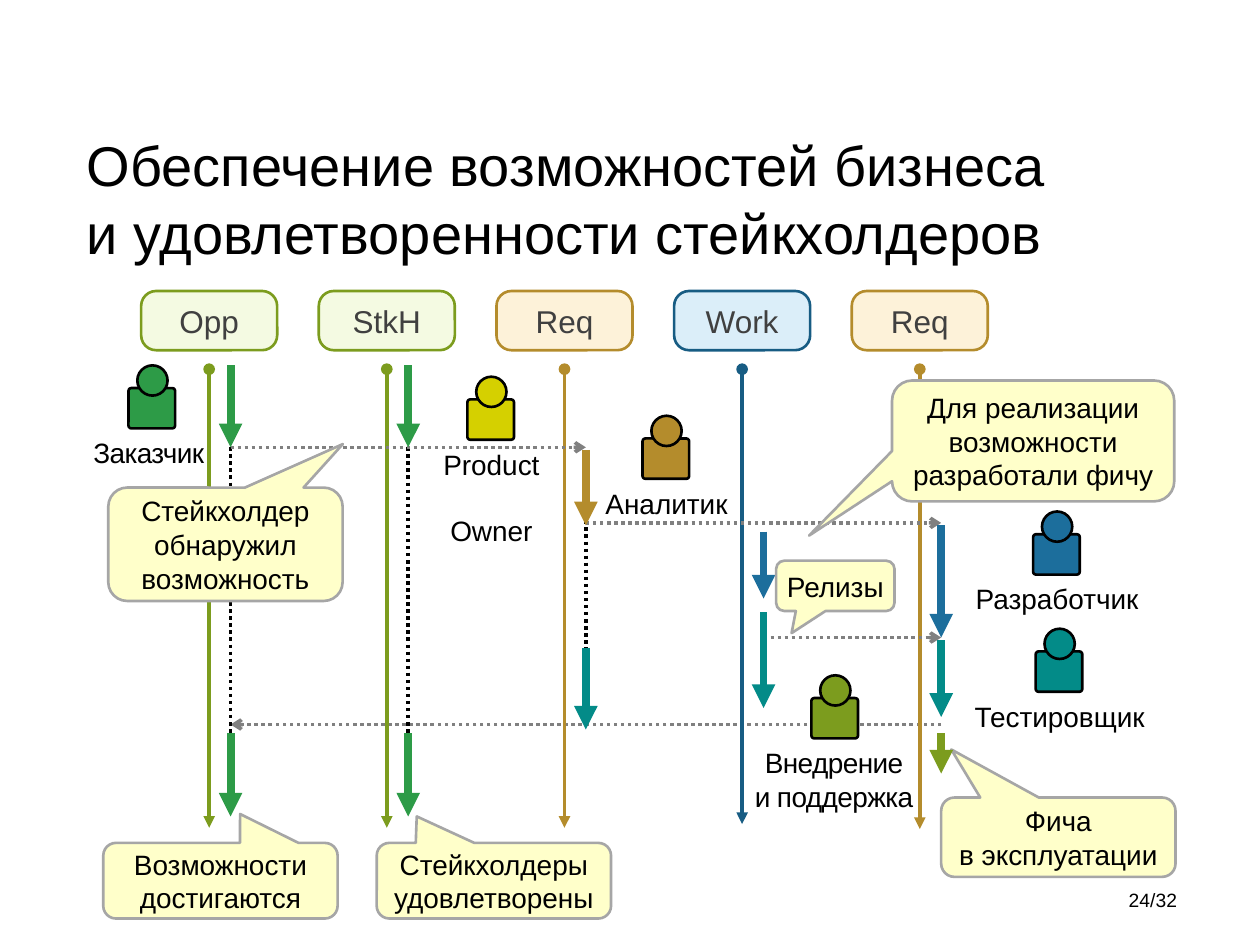
from lxml.etree import SubElement
from pptx import Presentation
from pptx.dml.color import RGBColor
from pptx.enum.dml import MSO_LINE
from pptx.enum.shapes import MSO_CONNECTOR, MSO_SHAPE
from pptx.enum.text import MSO_ANCHOR as Anchor, PP_ALIGN as Align
from pptx.oxml.ns import qn
from pptx.util import Inches, Pt

THEME = {
    "font": "Arial",
    "size": {"title": 32, "lane": 18, "label": 16, "page": 11},
    "width": {"outline": 1.5, "dots": 2, "lane": 2.25, "activity": 4.5},
    "colour": {
        "black": "000000", "dark": "404040", "grey": "808080",
        "olive": "7C9C1E", "ochre": "B48C2C", "navy": "175C83",
        "green": "2D9B47", "yellow": "D5D000", "blue": "1C6E9C", "teal": "038B88",
        "pale olive": "F4FAE2", "pale ochre": "FDF2D9", "pale blue": "DBEEF9",
        "note": "FFFFCA", "note edge": "A6A6A6",
    },
}

TITLE = "Обеспечение возможностей бизнеса\vи удовлетворенности стейкхолдеров"
PAGE = "24/32"
# name, line colour, fill, end of lifeline
LANES = [
    ("Opp", "olive", "pale olive", 6.57),
    ("StkH", "olive", "pale olive", 6.57),
    ("Req", "ochre", "pale ochre", 6.57),
    ("Work", "navy", "pale blue", 6.54),
    ("Req", "ochre", "pale ochre", 6.58),
]
# lane, start, end, colour
ACTIVITIES = [
    (0, 2.9, 3.55, "green"), (0, 5.82, 6.48, "green"),
    (1, 2.9, 3.55, "green"), (1, 5.82, 6.48, "green"),
    (2, 3.57, 4.17, "ochre"), (2, 5.14, 5.79, "teal"),
    (3, 4.22, 4.75, "blue"), (3, 4.86, 5.62, "teal"),
    (4, 4.17, 5.06, "blue"), (4, 5.08, 5.69, "teal"), (4, 5.82, 6.14, "olive"),
]
# lane, start, end
WAITS = [(0, 3.55, 5.82), (1, 3.55, 5.82), (2, 4.13, 5.21)]
# from lane, to lane, y
RETURN = (4, 0, 5.75)
MESSAGES = [(0, 2, 3.55), (2, 4, 4.15), (3, 4, 5.06)]
# role, colour, icon left, icon top, label centre, label width, tracking
PEOPLE = [
    ("Заказчик", "green", 1.02, 2.9, 1.18, 1.21, -0.3),
    ("Product\nOwner", "yellow", 3.71, 2.99, 3.9, 1.01, 0),
    ("Аналитик", "ochre", 5.1, 3.3, 5.29, 1.21, 0),
    ("Разработчик", "blue", 8.2, 4.06, 8.39, 1.52, 0),
    ("Тестировщик", "teal", 8.22, 4.99, 8.41, 1.57, 0),
    ("Внедрение\vи поддержка", "olive", 6.44, 5.36, 6.62, 1.53, -0.3),
]
# text, (left, top, width, height), pointer offset from the centre
LOWER_NOTES = [
    ("Возможности достигаются", (0.82, 6.69, 1.86, 0.6), (0.084, -0.883)),
    ("Стейкхолдеры удовлетворены", (2.99, 6.69, 1.86, 0.6), (-0.329, -0.851)),
    ("Фича\vв эксплуатации", (7.47, 6.33, 1.86, 0.63), (-0.457, -1.106)),
]
UPPER_NOTES = [
    ("Для реализации возможности разработали фичу", (7.08, 3.02, 2.24, 0.96), (-0.794, 0.783)),
    ("Cтейкхолдер обнаружил возможность", (0.86, 3.87, 1.86, 0.9), (0.501, -0.884)),
    ("Релизы", (6.16, 4.45, 0.94, 0.4), (-0.369, 0.938)),
]

FIRST_LANE, LANE_PITCH, ACTIVITY_SHIFT = 1.66, 1.41, 0.17
HEADER_W, HEADER_H, HEADER_TOP, LIFELINE_TOP = 1.08, 0.47, 2.31, 2.93

deck = Presentation()
deck.slide_width, deck.slide_height = Inches(10), Inches(7.5)
slide = deck.slides.add_slide(deck.slide_layouts[6])


def colour(name):
    return RGBColor.from_string(THEME["colour"][name])


def lane_x(lane):
    return FIRST_LANE + lane * LANE_PITCH


def activity_x(lane):
    return lane_x(lane) + ACTIVITY_SHIFT


def write(shape, text, size, ink="black", align=Align.CENTER, anchor=Anchor.TOP,
          margins=(0.1, 0.05), tracking=0):
    frame = shape.text_frame
    frame.word_wrap = True
    frame.vertical_anchor = anchor
    frame.margin_left = frame.margin_right = Inches(margins[0])
    frame.margin_top = frame.margin_bottom = Inches(margins[1])
    frame.text = text
    for paragraph in frame.paragraphs:
        paragraph.alignment = align
        for run in paragraph.runs:
            run.font.name = THEME["font"]
            run.font.size = Pt(THEME["size"][size])
            run.font.color.rgb = colour(ink)
            if tracking:
                run.font._element.set("spc", str(round(tracking * 100)))
    return frame


def add_text(box, text, size, **options):
    return write(slide.shapes.add_textbox(*map(Inches, box)), text, size, **options)


def add_outlined(shapes, preset, box, fill, edge, adjustments=()):
    shape = shapes.add_shape(preset, *map(Inches, box))
    shape.shadow.inherit = False
    shape.fill.solid()
    shape.fill.fore_color.rgb = colour(fill)
    shape.line.color.rgb = colour(edge)
    shape.line.width = Pt(THEME["width"]["outline"])
    for index, value in enumerate(adjustments):
        shape.adjustments[index] = value
    return shape


def add_line(start, end, ink, width, dotted=False, head=None, tail=None):
    connector = slide.shapes.add_connector(
        MSO_CONNECTOR.STRAIGHT, *map(Inches, (*start, *end)))
    connector.line.color.rgb = colour(ink)
    connector.line.width = Pt(THEME["width"][width])
    if dotted:
        connector.line.dash_style = MSO_LINE.ROUND_DOT
    properties = connector._element.spPr
    outline = properties.find(qn("a:ln"))
    for tag, kind in (("a:headEnd", head), ("a:tailEnd", tail)):
        if kind:
            SubElement(outline, qn(tag)).set("type", kind)
    SubElement(properties, qn("a:effectLst"))


def add_message(source, target, y):
    add_line((activity_x(source), y), (activity_x(target), y), "grey", "dots",
             dotted=True, tail="arrow")


def add_note(text, box, pointer):
    note = add_outlined(slide.shapes, MSO_SHAPE.ROUNDED_RECTANGULAR_CALLOUT, box,
                        "note", "note edge", (*pointer, 0.167))
    write(note, text, "label", anchor=Anchor.MIDDLE, margins=(0.04, 0.02))


def add_person(role, ink, left, top, label_centre, label_width, tracking):
    icon = slide.shapes.add_group_shape().shapes
    body_top = top + 0.18
    add_outlined(icon, MSO_SHAPE.ROUNDED_RECTANGLE, (left, body_top, 0.37, 0.32),
                 ink, "black", [0.071])
    add_outlined(icon, MSO_SHAPE.OVAL, (left + 0.07, top, 0.24, 0.24), ink, "black")
    lines = len(role.splitlines())
    label_box = (label_centre - label_width / 2, body_top + 0.33,
                 label_width, 0.1 + 0.27 * lines)
    label = add_text(label_box, role, "label", margins=(0, 0.05), tracking=tracking)
    for paragraph in label.paragraphs[1:]:
        paragraph.space_before = Pt(19)


add_text((0.59, 0.99, 8.5, 0.82), TITLE, "title", align=Align.LEFT)
add_message(*RETURN)

for lane, (name, edge, fill, bottom) in enumerate(LANES):
    x = lane_x(lane)
    add_line((x, LIFELINE_TOP), (x, bottom), edge, "lane", head="oval", tail="triangle")
    header = add_outlined(slide.shapes, MSO_SHAPE.ROUNDED_RECTANGLE,
                          (x - HEADER_W / 2, HEADER_TOP, HEADER_W, HEADER_H),
                          fill, edge, [0.253])
    write(header, name, "lane", ink="dark", anchor=Anchor.MIDDLE)

for note in LOWER_NOTES:
    add_note(*note)
for person in PEOPLE:
    add_person(*person)
for lane, start, end in WAITS:
    add_line((activity_x(lane), start), (activity_x(lane), end), "black", "dots", dotted=True)
for message in MESSAGES:
    add_message(*message)
for lane, start, end, ink in ACTIVITIES:
    add_line((activity_x(lane), start), (activity_x(lane), end), ink, "activity", tail="triangle")
for note in UPPER_NOTES:
    add_note(*note)
add_text((8.65, 6.97, 0.79, 0.34), PAGE, "page", align=Align.RIGHT, anchor=Anchor.MIDDLE)

deck.save("out.pptx")
